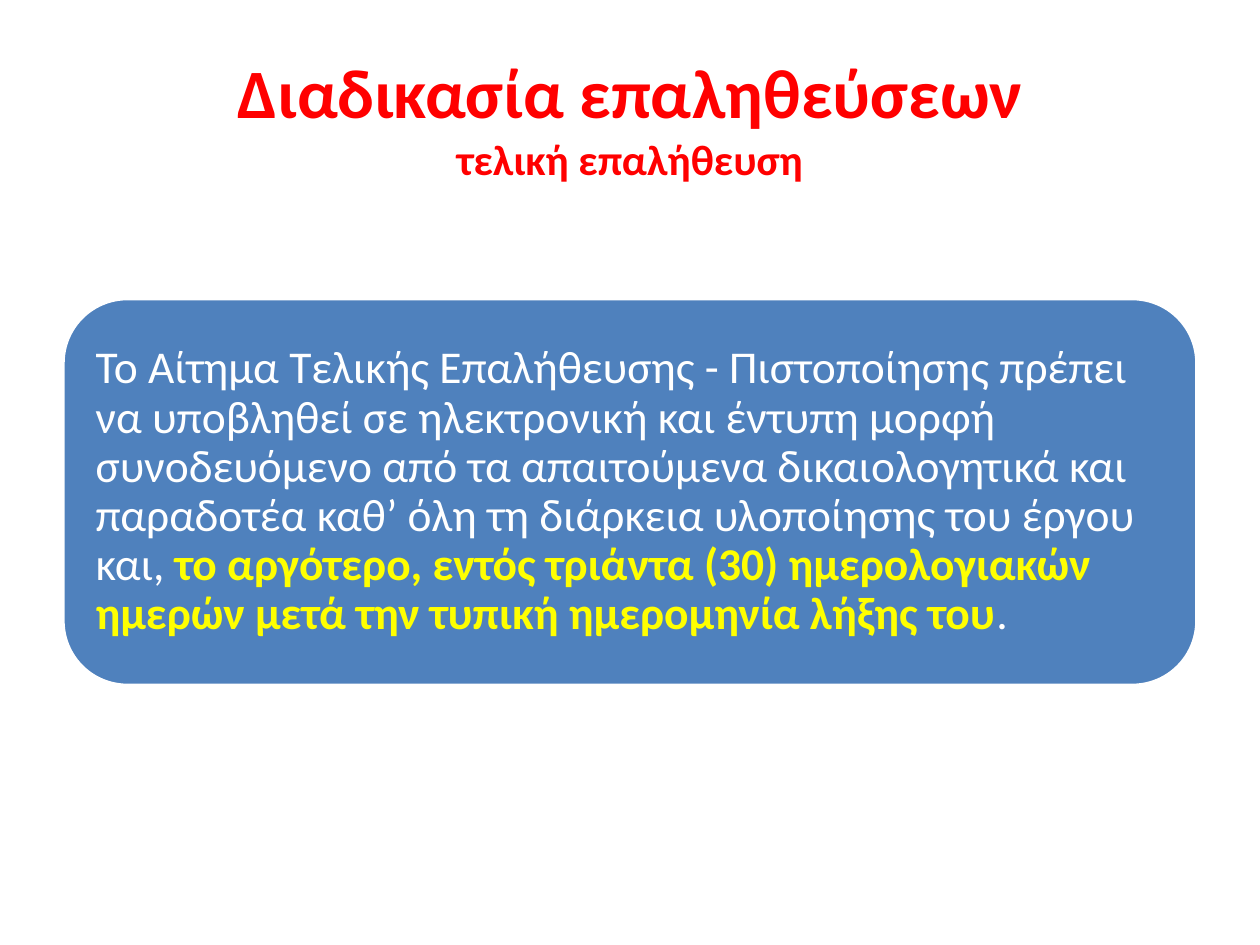
import pptx
import pptx.util
import pptx.dml.color
import pptx.enum.shapes
import pptx.enum.text
from pptx.util import Inches

FONT = "Calibri"
COLORS = {"red": "FF0000", "blue": "4F81BD", "white": "FFFFFF", "yellow": "FFFF00"}

# Each run: text, size, colour, bold
HEADING = ("Διαδικασία επαληθεύσεων", 39.6, "red", True)
SUBHEADING = ("τελική επαλήθευση", 24.3, "red", True)
REQUIREMENT = [
    ("Το Αίτημα Τελικής Επαλήθευσης - Πιστοποίησης πρέπει να υποβληθεί σε "
     "ηλεκτρονική και έντυπη μορφή συνοδευόμενο από τα απαιτούμενα "
     "δικαιολογητικά και παραδοτέα καθ’ όλη τη διάρκεια υλοποίησης του έργου "
     "και, ", 26, "white", False),
    ("το αργότερο, εντός τριάντα (30) ημερολογιακών ημερών μετά την τυπική "
     "ημερομηνία λήξης του", 26, "yellow", True),
    (".", 26, "white", False),
]

LEFT, WIDTH = Inches(0.5), Inches(9)


def rgb(name):
    return pptx.dml.color.RGBColor.from_string(COLORS[name])


def add_run(paragraph, text, size, color, bold):
    run = paragraph.add_run()
    run.text = text
    run.font.name = FONT
    run.font.size = pptx.util.Pt(size)
    run.font.bold = bold
    run.font.color.rgb = rgb(color)


def middle_paragraph(shape, alignment):
    """Wrap and vertically centre the shape's text; return its paragraph."""
    frame = shape.text_frame
    frame.word_wrap = True
    frame.vertical_anchor = pptx.enum.text.MSO_ANCHOR.MIDDLE
    paragraph = frame.paragraphs[0]
    paragraph.alignment = alignment
    return paragraph


def main():
    deck = pptx.Presentation()
    deck.slide_width, deck.slide_height = Inches(10), Inches(7.5)
    slide = deck.slides.add_slide(deck.slide_layouts[6])

    title = slide.shapes.add_textbox(LEFT, Inches(0.3), WIDTH, Inches(1.25))
    title_line = middle_paragraph(title, pptx.enum.text.PP_ALIGN.CENTER)
    add_run(title_line, *HEADING)
    title_line.add_line_break()
    add_run(title_line, *SUBHEADING)

    panel = slide.shapes.add_shape(
        pptx.enum.shapes.MSO_SHAPE.ROUNDED_RECTANGLE,
        LEFT, Inches(2.37), WIDTH, Inches(3.07))
    panel.shadow.inherit = False
    panel.fill.solid()
    panel.fill.fore_color.rgb = rgb("blue")
    panel.line.color.rgb = rgb("white")
    panel.line.width = pptx.util.Pt(2)

    frame = panel.text_frame
    frame.margin_left = frame.margin_right = Inches(0.11)
    frame.margin_top = frame.margin_bottom = Inches(0.11)
    requirement = middle_paragraph(panel, pptx.enum.text.PP_ALIGN.LEFT)
    requirement.line_spacing = 0.9
    for run in REQUIREMENT:
        add_run(requirement, *run)

    deck.save("out.pptx")


if __name__ == "__main__":
    main()
